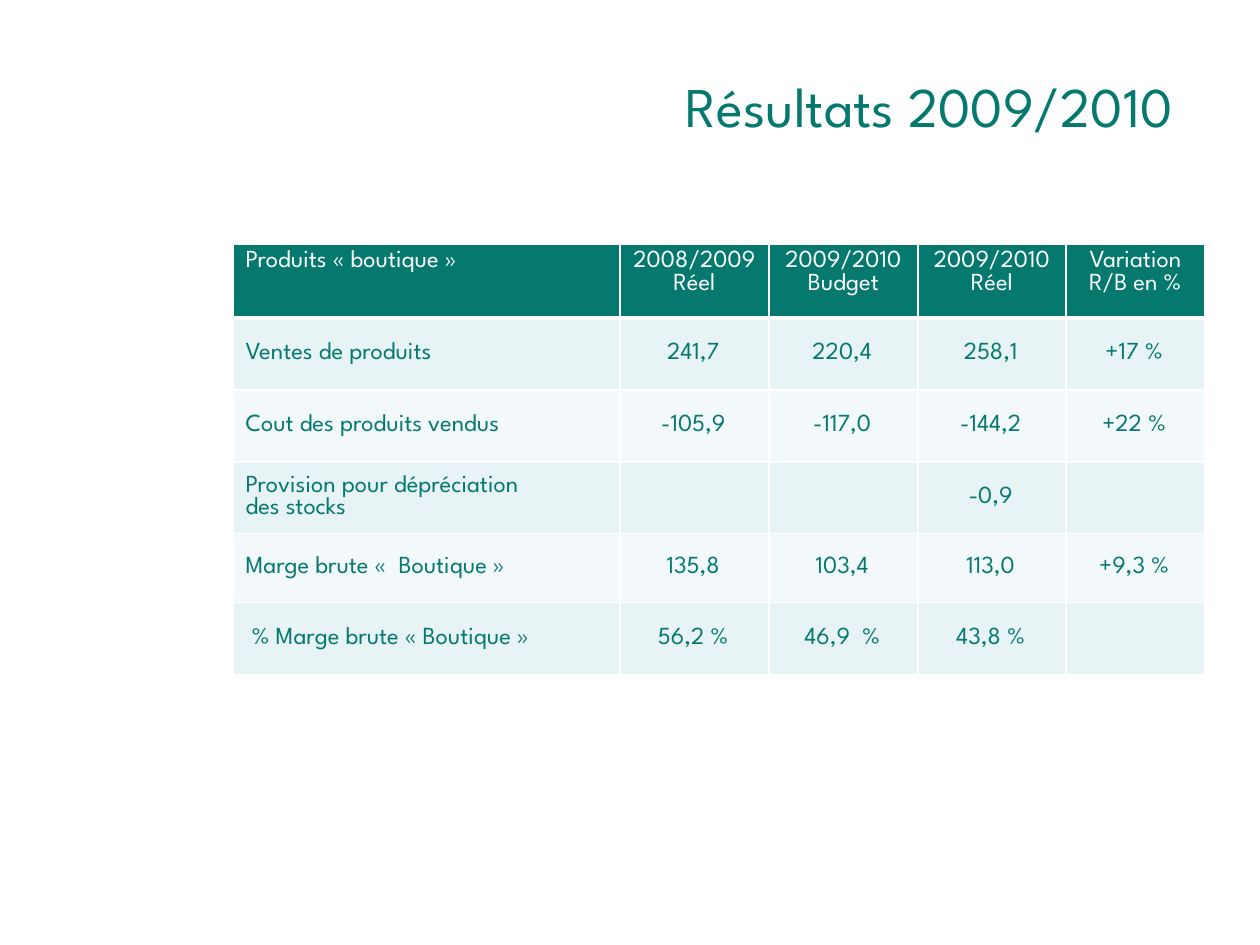
from lxml import etree
from pptx import Presentation
from pptx.dml.color import RGBColor
from pptx.enum.text import MSO_ANCHOR, PP_ALIGN
from pptx.oxml.ns import qn
from pptx.util import Emu, Pt

LEFT, MID, RIGHT = PP_ALIGN.LEFT, PP_ALIGN.CENTER, PP_ALIGN.RIGHT
TOP, MIDDLE = MSO_ANCHOR.TOP, MSO_ANCHOR.MIDDLE
FONT = "League Spartan"
TEAL, WHITE = "05796E", "FFFFFF"
BANDS = ["E7F3F4", "F3F9FA"]

COLS = [387, 149, 149, 148, 139]
ROWS = [74, 72, 72, 67, 69, 72]
DATA = [
    ["Produits « boutique »", "2008/2009\nRéel", "2009/2010\nBudget",
     "2009/2010\nRéel", "Variation R/B en %"],
    ["Ventes de produits", "241,7", "220,4", "258,1", "+17 %"],
    ["Cout des produits vendus", "-105,9", "-117,0", "-144,2", "+22 %"],
    ["Provision pour dépréciation\ndes stocks", "", "", "-0,9", ""],
    ["Marge brute «  Boutique »", "135,8", "103,4", "113,0", "+9,3 %"],
    [" % Marge brute « Boutique »", "56,2 %", "46,9  %", "43,8 %", ""],
]


def px(n):
    return Emu(round(n * 914400 / 126))


def rgb(code):
    return RGBColor.from_string(code)


def write(frame, text, size, color, align):
    frame.text = text
    for para in frame.paragraphs:
        para.alignment = align
        font = para.font
        font.name, font.size = FONT, Pt(size)
        font.color.rgb = rgb(color)


def edge(cell, side, width):
    # Borders come before the fill in the cell properties
    props = cell._tc.get_or_add_tcPr()
    line = etree.Element(qn(f"a:ln{side}"), w=str(Pt(width)))
    fill = etree.SubElement(line, qn("a:solidFill"))
    etree.SubElement(fill, qn("a:srgbClr"), val=WHITE)
    props.insert("LRTB".index(side), line)


def add_title(slide, x, y, w, h):
    frame = slide.shapes.add_textbox(px(x), px(y), px(w), px(h)).text_frame
    frame.word_wrap = True
    frame.vertical_anchor = MIDDLE
    write(frame, "Résultats 2009/2010", 32, TEAL, RIGHT)


def add_grid(slide, x, y):
    grid = slide.shapes.add_table(len(ROWS), len(COLS), px(x), px(y),
                                  px(sum(COLS)), px(sum(ROWS))).table
    for col, w in zip(grid.columns, COLS):
        col.width = px(w)
    for row, h in zip(grid.rows, ROWS):
        row.height = px(h)
    for r, texts in enumerate(DATA):
        head = r == 0
        for c, text in enumerate(texts):
            cell = grid.cell(r, c)
            cell.vertical_anchor = TOP if head else MIDDLE
            if not head:
                cell.margin_right = px(15)
            write(cell.text_frame, text, 14, WHITE if head else TEAL,
                  MID if c else LEFT)
            cell.fill.solid()
            cell.fill.fore_color.rgb = rgb(TEAL if head else BANDS[(r - 1) % 2])
            for side in "LRTB":
                edge(cell, side, 3 if head and side == "B" else 1)


def main():
    deck = Presentation()
    deck.slide_width, deck.slide_height = px(1260), px(945)
    slide = deck.slides.add_slide(deck.slide_layouts[6])
    add_title(slide, 0, 66, 1186, 79)
    add_grid(slide, 233, 244)
    deck.save("out.pptx")


if __name__ == "__main__":
    main()
